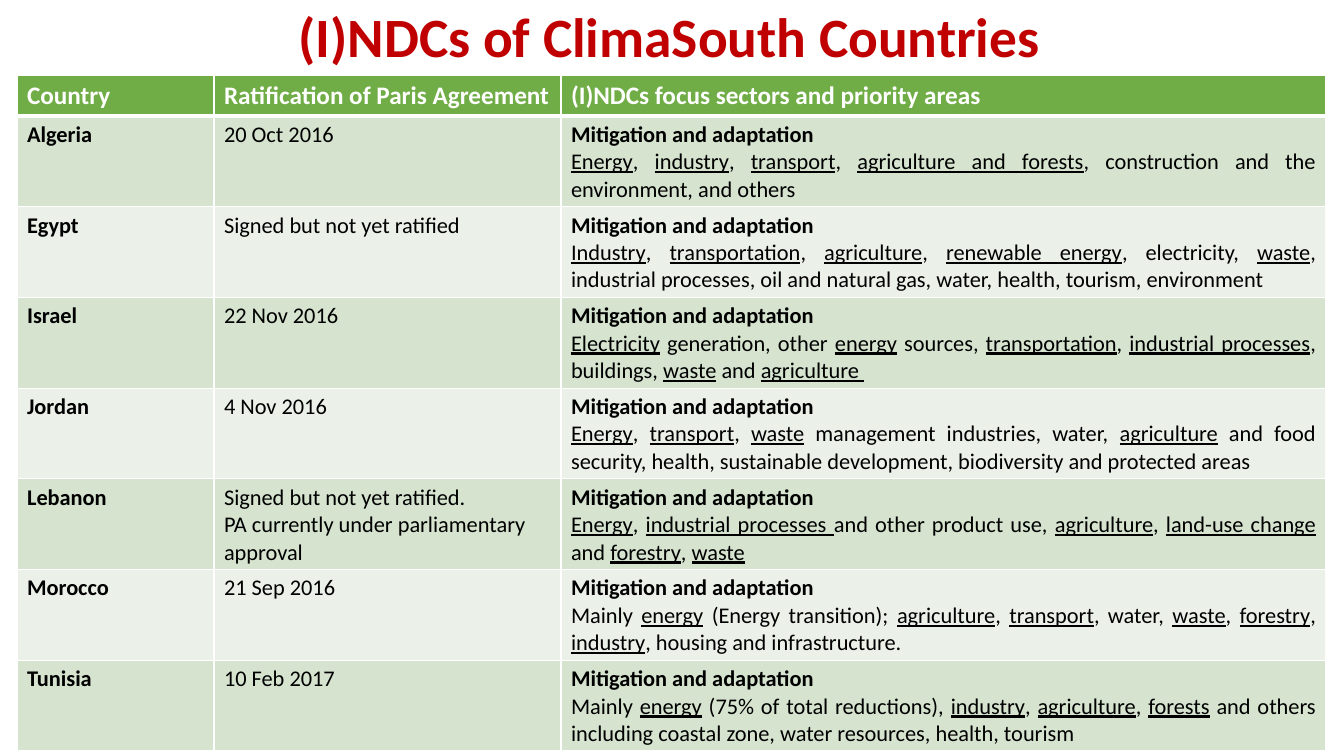
from dataclasses import dataclass

from lxml import etree
from pptx import Presentation, util as u
from pptx.dml.color import RGBColor
from pptx.enum import text
from pptx.oxml import ns

EMU_PER_PX = 914400 / 100.8
FONT = "Calibri"
COLORS = {
    "title": "C00000", "header": "70AD47", "odd": "D5E3CF", "even": "EBF1E9",
    "white": "FFFFFF", "black": "000000",
}
COLUMN_WIDTHS = (197, 347, 765)
HEADER_HEIGHT, ROW_HEIGHT = 41, 87
HEADINGS = (
    "Country",
    "Ratification of Paris Agreement",
    "(I)NDCs focus sectors and priority areas",
)
FOCUS = "Mitigation and adaptation"


@dataclass(frozen=True)
class Country:
    name: str
    ratification: tuple[str, ...]
    sectors: str  # underscores enclose underlined words


COUNTRIES = (
    Country("Algeria", ("20 Oct 2016",),
            "_Energy_, _industry_, _transport_, _agriculture and forests_, "
            "construction and the environment, and others"),
    Country("Egypt", ("Signed but not yet ratified",),
            "_Industry_, _transportation_, _agriculture_, _renewable energy_, electricity, "
            "_waste_, industrial processes, oil and natural gas, water, health, tourism, "
            "environment"),
    Country("Israel", ("22 Nov 2016",),
            "_Electricity_ generation, other _energy_ sources, _transportation_, "
            "_industrial processes_, buildings, _waste_ and _agriculture _"),
    Country("Jordan", ("4 Nov 2016",),
            "_Energy_, _transport_, _waste_ management industries, water, _agriculture_ and "
            "food security, health, sustainable development, biodiversity and protected areas"),
    Country("Lebanon",
            ("Signed but not yet ratified.", "PA currently under parliamentary approval"),
            "_Energy_, _industrial processes _and other product use, _agriculture_, "
            "_land-use change _and _forestry_, _waste_"),
    Country("Morocco", ("21 Sep 2016",),
            "Mainly _energy_ (Energy transition); _agriculture_, _transport_, water, _waste_, "
            "_forestry_, _industry_, housing and infrastructure."),
    Country("Tunisia", ("10 Feb 2017",),
            "Mainly _energy_ (75% of total reductions), _industry_, _agriculture_, _forests_ "
            "and others including coastal zone, water resources, health, tourism"),
)


def px(length: int) -> u.Emu:
    return u.Emu(round(length * EMU_PER_PX))


def write(paragraph, marked: str, size: float, color: str, bold: bool = False) -> None:
    """Add runs to a paragraph, underlining the words between underscores."""
    for index, words in enumerate(marked.split("_")):
        if not words:
            continue
        run = paragraph.add_run()
        run.text = words
        values = {"name": FONT, "size": u.Pt(size), "bold": bold}
        if index % 2:
            values["underline"] = True
        for name, value in values.items():
            setattr(run.font, name, value)
        run.font.color.rgb = RGBColor.from_string(COLORS[color])


def style_cell(cell, fill: str, top: int = 1, bottom: int = 1) -> None:
    """Give a cell its white borders, in points, and its fill."""
    properties = cell._tc.get_or_add_tcPr()
    for side, width in {"L": 1, "R": 1, "T": top, "B": bottom}.items():
        line = etree.SubElement(properties, ns.qn(f"a:ln{side}"), w=str(u.Pt(width)))
        solid = etree.SubElement(line, ns.qn("a:solidFill"))
        etree.SubElement(solid, ns.qn("a:srgbClr"), val=COLORS["white"])
    cell.fill.solid()
    cell.fill.fore_color.rgb = RGBColor.from_string(COLORS[fill])


def add_title(slide, title: str) -> None:
    frame = slide.shapes.add_textbox(px(90), px(16), px(1159), px(48)).text_frame
    frame.word_wrap = True
    frame.vertical_anchor = text.MSO_ANCHOR.MIDDLE
    paragraph = frame.paragraphs[0]
    paragraph.alignment = text.PP_ALIGN.CENTER
    paragraph.line_spacing = 0.9
    write(paragraph, title, 39.6, "title", bold=True)


def fill_country(cells, country: Country) -> None:
    name, ratification, sectors = (cell.text_frame for cell in cells)
    write(name.paragraphs[0], country.name, 16, "black", bold=True)
    for index, line in enumerate(country.ratification):
        paragraph = ratification.add_paragraph() if index else ratification.paragraphs[0]
        write(paragraph, line, 16, "black")
    write(sectors.paragraphs[0], FOCUS, 16, "black", bold=True)
    write(sectors.add_paragraph(), country.sectors, 16, "black")
    for paragraph in sectors.paragraphs:
        paragraph.alignment = text.PP_ALIGN.JUSTIFY


def add_country_table(slide) -> None:
    height = HEADER_HEIGHT + ROW_HEIGHT * len(COUNTRIES)
    table = slide.shapes.add_table(
        len(COUNTRIES) + 1, len(HEADINGS),
        px(17), px(75), px(sum(COLUMN_WIDTHS)), px(height),
    ).table
    for column, width in zip(table.columns, COLUMN_WIDTHS):
        column.width = px(width)
    for index, row in enumerate(table.rows):
        row.height = px(ROW_HEIGHT if index else HEADER_HEIGHT)
    for cell, heading in zip(table.rows[0].cells, HEADINGS):
        style_cell(cell, "header", bottom=3)
        write(cell.text_frame.paragraphs[0], heading, 18, "white", bold=True)
    for index, country in enumerate(COUNTRIES, start=1):
        cells = list(table.rows[index].cells)
        for cell in cells:
            style_cell(cell, "odd" if index % 2 else "even", top=3 if index == 1 else 1)
        fill_country(cells, country)


def main() -> None:
    presentation = Presentation()
    presentation.slide_width, presentation.slide_height = px(1344), px(756)
    slide = presentation.slides.add_slide(presentation.slide_layouts[6])
    add_title(slide, "(I)NDCs of ClimaSouth Countries")
    add_country_table(slide)
    presentation.save("out.pptx")


if __name__ == "__main__":
    main()
